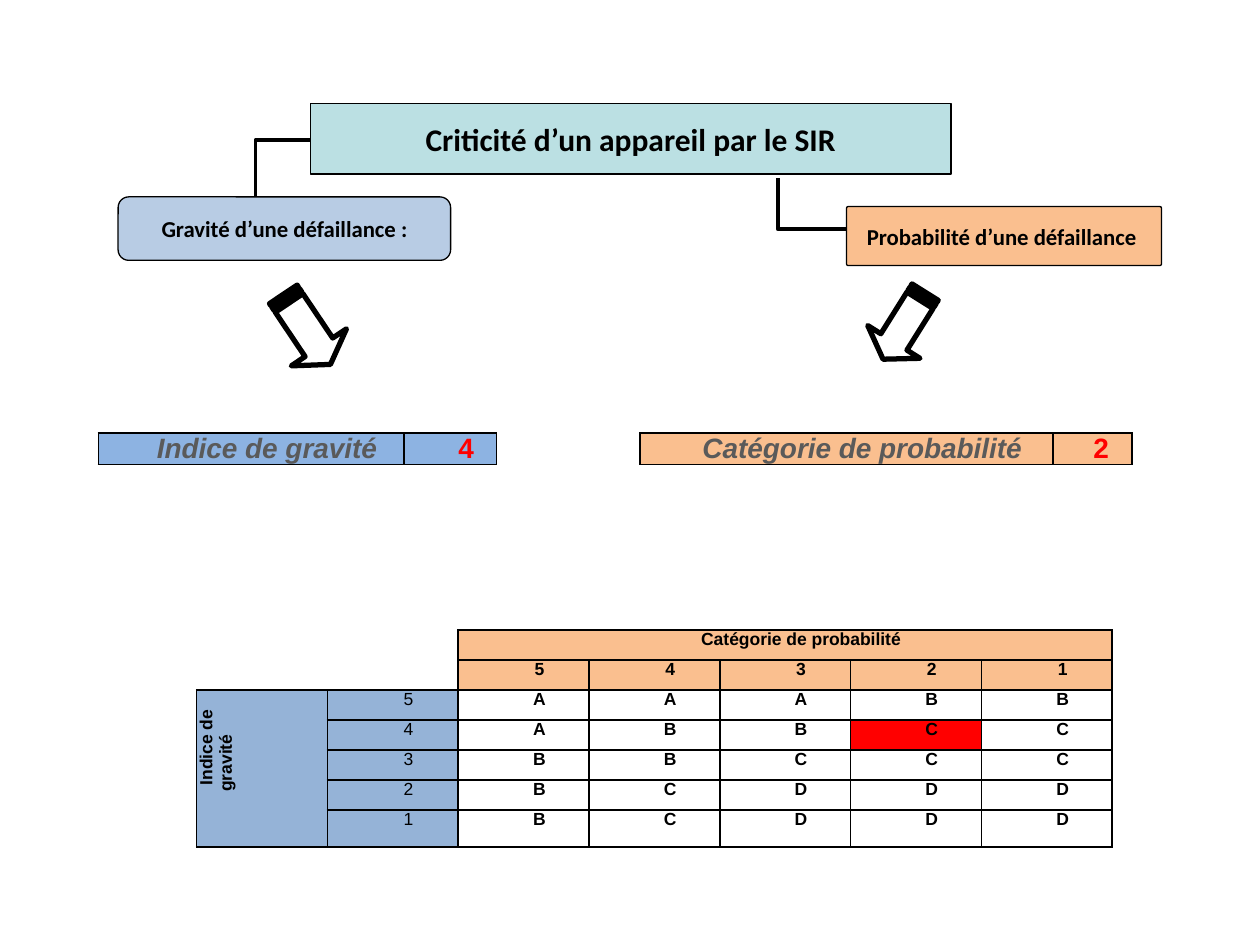
import pptx
import pptx.util
import pptx.dml.color
import pptx.enum.shapes
import pptx.enum.text
import pptx.oxml
import pptx.oxml.ns

Pt = pptx.util.Pt
SHAPES = pptx.enum.shapes.MSO_SHAPE
ALIGN = pptx.enum.text.PP_ALIGN
NAMESPACE = pptx.oxml.ns.nsdecls("a")
COLOURS = {
    "black": "000000", "white": "FFFFFF", "red": "FF0000", "grey": "5A5A5A",
    "teal": "BBE0E3", "pale blue": "B8CCE4", "sky": "8DB3E2",
    "blue": "95B3D7", "orange": "FABF8F",
}


def colour(name):
    return pptx.dml.color.RGBColor.from_string(COLOURS[name])


def element(markup):
    return pptx.oxml.parse_xml(markup.replace(">", f" {NAMESPACE}>", 1))


def write(frame, text, font="Arial", size=10, ink="black", bold=True, italic=False,
          align=ALIGN.CENTER, before=0, after=0, margin=0, indent=0):
    para = frame.paragraphs[0]
    para.alignment = align
    para.space_before, para.space_after = Pt(before), Pt(after)
    properties = para._p.get_or_add_pPr()
    properties.set("marL", str(Pt(margin)))
    properties.set("indent", str(Pt(indent)))
    if not text:
        para._p.append(element(f'<a:endParaRPr sz="{size * 100}"></a:endParaRPr>'))
        return
    span = para.add_run()
    span.text = text
    span.font.name, span.font.size = font, Pt(size)
    span.font.bold, span.font.italic = bold, italic
    span.font.color.rgb = colour(ink)


class Sheet:
    """Draws styled elements on the current slide, with lengths in points."""

    def __init__(self, deck):
        self.slide = deck.slides.add_slide(deck.slide_layouts[5])
        self.ink = "black"
        self.no_grid = "{2D5ABB26-0587-4C30-8999-92F81FD0307C}"

    def paint(self, shape, fill, weight):
        shape.fill.solid()
        shape.fill.fore_color.rgb = colour(fill)
        shape.line.color.rgb = colour(self.ink)
        shape.line.width = Pt(weight)

    def label(self, shape, text, size):
        frame = shape.text_frame
        frame.word_wrap = True
        frame.auto_size = pptx.enum.text.MSO_AUTO_SIZE.NONE
        frame.vertical_anchor = pptx.enum.text.MSO_ANCHOR.MIDDLE
        frame.margin_left = frame.margin_right = frame.margin_top = frame.margin_bottom = 0
        write(frame, text, font="Calibri", size=size, before=6, after=10)

    def title(self, place, text, fill):
        title = self.slide.shapes.title
        title.left, title.top, title.width, title.height = map(Pt, place)
        title.element.spPr.append(element(
            '<a:prstGeom prst="roundRect"><a:avLst/></a:prstGeom>'))
        self.paint(title, fill, 0.75)
        self.label(title, text, 18)

    def box(self, place, text, fill, rounding):
        box = self.slide.shapes.add_shape(SHAPES.ROUNDED_RECTANGLE, *map(Pt, place))
        box.shadow.inherit = False
        box.adjustments[0] = rounding
        self.paint(box, fill, 0.75)
        self.label(box, text, 13)

    def elbow(self, place, turn):
        left, top, width, height = place
        elbow = self.slide.shapes.add_connector(
            pptx.enum.shapes.MSO_CONNECTOR.ELBOW,
            Pt(left), Pt(top), Pt(left + width), Pt(top + height))
        elbow.line.color.rgb = colour(self.ink)
        elbow.line.width = Pt(2.25)
        properties = elbow._element.spPr
        properties.xfrm.rot = turn
        properties.find(pptx.oxml.ns.qn("a:prstGeom")).set("prst", "bentConnector2")
        properties.append(element("<a:effectLst></a:effectLst>"))

    def arrow(self, place, turn, head):
        arrow = self.slide.shapes.add_shape(SHAPES.STRIPED_RIGHT_ARROW, *map(Pt, place))
        arrow.shadow.inherit = False
        arrow.rotation = turn
        arrow.adjustments[0], arrow.adjustments[1] = 0.5, head
        self.paint(arrow, "white", 3)

    def cell(self, cell, text="", fill=None, border=True, vertical=False, **style):
        cell.margin_left = cell.margin_right = Pt(5)
        cell.margin_top = cell.margin_bottom = 0
        write(cell.text_frame, text, **{"indent": 18, **style})
        properties = cell._tc.get_or_add_tcPr()
        if vertical:
            properties.set("vert", "vert270")
        for side in "LRTB" if border else "":
            properties.append(element(
                f'<a:ln{side} w="{Pt(1)}"><a:solidFill><a:srgbClr val="{COLOURS[self.ink]}"/>'
                f'</a:solidFill></a:ln{side}>'))
        if fill:
            cell.fill.solid()
            cell.fill.fore_color.rgb = colour(fill)
        else:
            cell.fill.background()

    def table(self, left, top, widths, heights, rows, merges=()):
        table = self.slide.shapes.add_table(
            len(heights), len(widths), Pt(left), Pt(top),
            Pt(sum(widths)), Pt(sum(heights))).table
        table.first_row = table.horz_banding = False
        table._tbl.tblPr.find(pptx.oxml.ns.qn("a:tableStyleId")).text = self.no_grid
        for column, width in zip(table.columns, widths):
            column.width = Pt(width)
        for row, height in zip(table.rows, heights):
            row.height = Pt(height)
        for r, row in enumerate(rows):
            for c, content in enumerate(row):
                self.cell(table.cell(r, c), **content)
        for first, last in merges:
            table.cell(*first).merge(table.cell(*last))


def score(sheet, left, widths, name, value, fill, value_align):
    style = dict(fill=fill, size=16, before=6)
    sheet.table(left, 247.5, widths, [18], [[
        dict(text=name, ink="grey", italic=True, **style),
        dict(text=value, ink="red", align=value_align, **style)]])


def matrix(sheet):
    spaced = dict(before=3, after=3)
    header = dict(fill="orange", **spaced)
    corner = [dict(border=False)] * 2
    rows = [corner + [dict(text="Catégorie de probabilité", **header)] + [header] * 4,
            corner + [dict(text=number, **header) for number in "54321"]]
    grades = ["AAABB", "ABBCC", "BBCCC", "BCDDD", "BCDDD"]
    for gravity, letters in zip("54321", grades):
        side = dict(fill="blue")
        if gravity == "5":
            side = dict(text="Indice de gravité", fill="blue", vertical=True, before=12, margin=6)
        row = [side, dict(text=gravity, fill="blue", bold=False, before=6)]
        for probability, letter in zip("54321", letters):
            chosen = (gravity, probability) == ("4", "2")
            row.append(dict(text=letter, fill="red" if chosen else None, **spaced))
        rows.append(row)
    sheet.table(112.3, 360, [74.75] * 7, [17.15] * 6 + [21], rows,
                [((0, 2), (0, 6)), ((2, 0), (6, 0))])


def main():
    deck = pptx.Presentation()
    deck.slide_width, deck.slide_height = Pt(720), Pt(540)
    sheet = Sheet(deck)
    sheet.title((177.5, 59, 366, 40.5), "Criticité d’un appareil par le SIR", "teal")
    sheet.elbow((138, 88, 47, 31), 270)
    sheet.box((67.5, 112.5, 190, 36.25), "Gravité d’une défaillance :", "pale blue", 0.167)
    sheet.elbow((444.5, 101.5, 123, 29.5), 180)
    sheet.box((483.75, 118, 180, 33.75), "Probabilité d’une défaillance ", "orange", 0.03)
    sheet.arrow((151.25, 169.25, 48.25, 38), 56.1, 0.31)
    sheet.arrow((494, 168.5, 45.25, 35.25), 122.1, 0.33)
    score(sheet, 56.25, [174.75, 52.75], "Indice de gravité", "4", "sky", ALIGN.CENTER)
    score(sheet, 365.75, [236, 45.25], "Catégorie de probabilité", "2", "orange", ALIGN.LEFT)
    matrix(sheet)
    deck.save("out.pptx")


if __name__ == "__main__":
    main()
